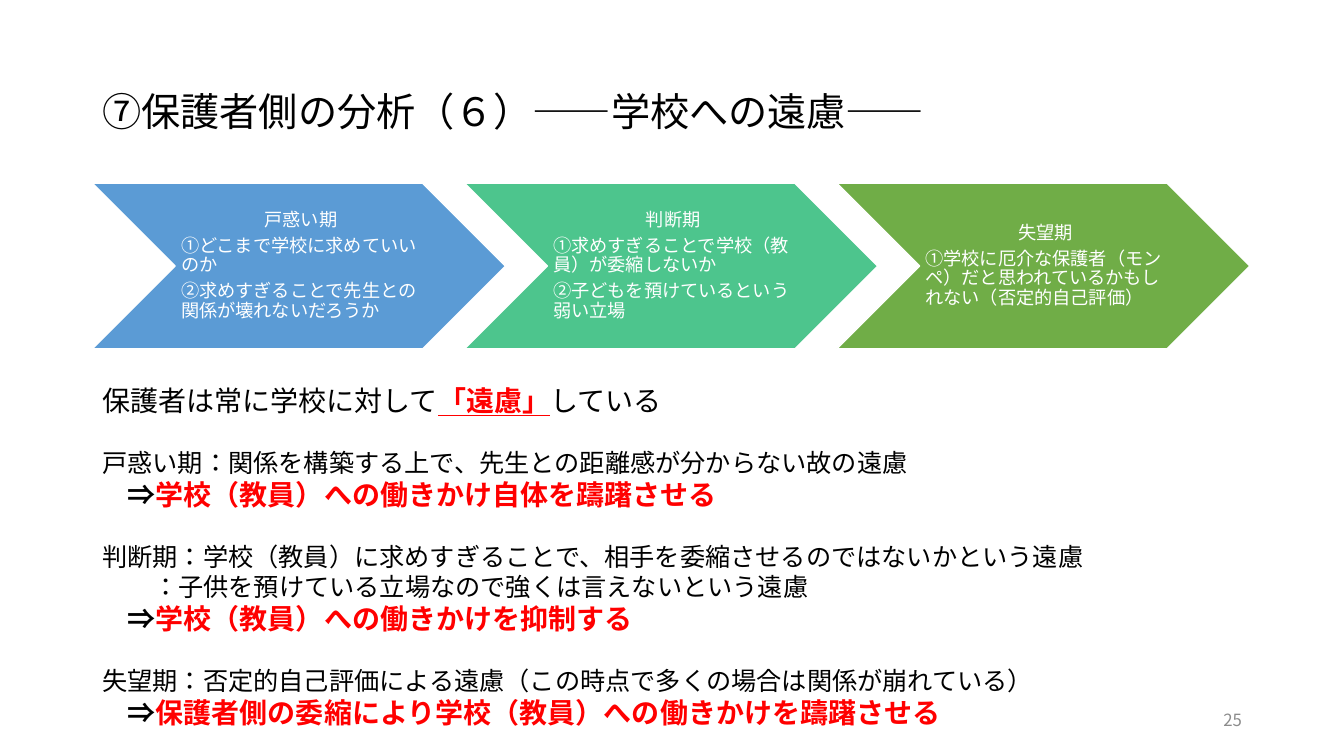
from lxml import etree
from pptx import Presentation
from pptx.dml.color import RGBColor
from pptx.enum.lang import MSO_LANGUAGE_ID
from pptx.enum.shapes import MSO_SHAPE
from pptx.enum.text import MSO_ANCHOR, PP_ALIGN
from pptx.oxml.ns import qn
from pptx.util import Cm, Pt

CHEVRON = MSO_SHAPE.CHEVRON
TOP, MIDDLE = MSO_ANCHOR.TOP, MSO_ANCHOR.MIDDLE
LEFT, CENTER, RIGHT = PP_ALIGN.LEFT, PP_ALIGN.CENTER, PP_ALIGN.RIGHT
JAPANESE = MSO_LANGUAGE_ID.JAPANESE

FONT = "Noto Sans CJK JP"
BLACK, WHITE, RED, GRAY = "000000", "FFFFFF", "FF0000", "8C8C8C"
MARGIN, CONTENT_WIDTH = 2.33, 29.21
CHEVRON_TOP, CHEVRON_WIDTH, CHEVRON_HEIGHT, CHEVRON_PITCH = 4.62, 10.41, 4.17, 9.38
INDENT = 0.64
SECTION_GAP = 21.6

PHASES = [
    ("5B9BD5", "戸惑い期", [
        "①どこまで学校に求めていいのか",
        "②求めすぎることで先生との関係が壊れないだろうか",
    ]),
    ("4DC58D", "判断期", [
        "①求めすぎることで学校（教員）が委縮しないか",
        "②子どもを預けているという弱い立場",
    ]),
    ("70AD47", "失望期", [
        "①学校に厄介な保護者（モンペ）だと思われているかもしれない（否定的自己評価）",
    ]),
]

SECTIONS = [
    (["戸惑い期：関係を構築する上で、先生との距離感が分からない故の遠慮"],
     "学校（教員）への働きかけ自体を躊躇させる"),
    (["判断期：学校（教員）に求めすぎることで、相手を委縮させるのではないかという遠慮",
      "：子供を預けている立場なので強くは言えないという遠慮"],
     "学校（教員）への働きかけを抑制する"),
    (["失望期：否定的自己評価による遠慮（この時点で多くの場合は関係が崩れている）"],
     "保護者側の委縮により学校（教員）への働きかけを躊躇させる"),
]


def rgb(color):
    return RGBColor.from_string(color)


def add_run(paragraph, text, size, color=BLACK, bold=False, underline=False):
    run = paragraph.add_run()
    run.text = text
    font = run.font
    font.name = FONT
    font.size = Pt(size)
    font.bold = bold
    font.underline = underline
    font.color.rgb = rgb(color)
    font.language_id = JAPANESE
    east_asian = etree.SubElement(run._r.get_or_add_rPr(), qn("a:ea"))
    east_asian.set("typeface", FONT)


def next_paragraph(text_frame):
    first = text_frame.paragraphs[0]
    return text_frame.add_paragraph() if first.runs else first


def indent(paragraph, steps):
    properties = paragraph._p.get_or_add_pPr()
    properties.set("marL", str(Cm(INDENT * steps)))
    properties.set("indent", "0")


def add_text_box(slide, left, top, width, height, anchor):
    box = slide.shapes.add_textbox(Cm(left), Cm(top), Cm(width), Cm(height))
    box.text_frame.word_wrap = True
    box.text_frame.vertical_anchor = anchor
    return box.text_frame


def add_line(slide, left, top, width, height, text, size, color, alignment):
    text_frame = add_text_box(slide, left, top, width, height, MIDDLE)
    paragraph = text_frame.paragraphs[0]
    paragraph.alignment = alignment
    paragraph.line_spacing = 0.9
    add_run(paragraph, text, size, color)


def add_phase(slide, index, color, heading, items):
    shape = slide.shapes.add_shape(
        CHEVRON, Cm(MARGIN + index * CHEVRON_PITCH), Cm(CHEVRON_TOP),
        Cm(CHEVRON_WIDTH), Cm(CHEVRON_HEIGHT))
    shape.shadow.inherit = False
    shape.fill.solid()
    shape.fill.fore_color.rgb = rgb(color)
    shape.line.color.rgb = rgb(WHITE)
    shape.line.width = Pt(1)
    text_frame = shape.text_frame
    text_frame.word_wrap = True
    text_frame.vertical_anchor = MIDDLE
    text_frame.margin_left = Cm(0.15)
    text_frame.margin_right = text_frame.margin_top = text_frame.margin_bottom = Cm(0.05)
    for text in [heading, *items]:
        paragraph = next_paragraph(text_frame)
        paragraph.alignment = CENTER if text == heading else LEFT
        paragraph.line_spacing = 0.9
        paragraph.space_after = Pt(4.5)
        add_run(paragraph, text, 13, WHITE)


def add_section(text_frame, lines, conclusion):
    for number, line in enumerate(lines):
        paragraph = next_paragraph(text_frame)
        if number == 0:
            paragraph.space_before = Pt(SECTION_GAP)
        else:
            indent(paragraph, 2)
        add_run(paragraph, line, 18)
    paragraph = next_paragraph(text_frame)
    indent(paragraph, 1)
    add_run(paragraph, "⇒", 20, bold=True)
    add_run(paragraph, conclusion, 20, RED, bold=True)


def add_analysis(slide):
    text_frame = add_text_box(slide, MARGIN, 9.53, CONTENT_WIDTH, 8.97, TOP)
    summary = text_frame.paragraphs[0]
    add_run(summary, "保護者は常に学校に対して", 20)
    add_run(summary, "「遠慮」", 20, RED, bold=True, underline=True)
    add_run(summary, "している", 20)
    for lines, conclusion in SECTIONS:
        add_section(text_frame, lines, conclusion)


def main():
    presentation = Presentation()
    presentation.slide_width = Cm(33.87)
    presentation.slide_height = Cm(19.05)
    slide = presentation.slides.add_slide(presentation.slide_layouts[6])
    add_line(slide, MARGIN, 1.02, CONTENT_WIDTH, 3.68,
             "⑦保護者側の分析（６）――学校への遠慮――", 28, BLACK, LEFT)
    for index, (color, heading, items) in enumerate(PHASES):
        add_phase(slide, index, color, heading, items)
    add_analysis(slide)
    add_line(slide, 23.93, 17.65, 7.62, 1.02, "25", 12, GRAY, RIGHT)
    presentation.save("out.pptx")


if __name__ == "__main__":
    main()
